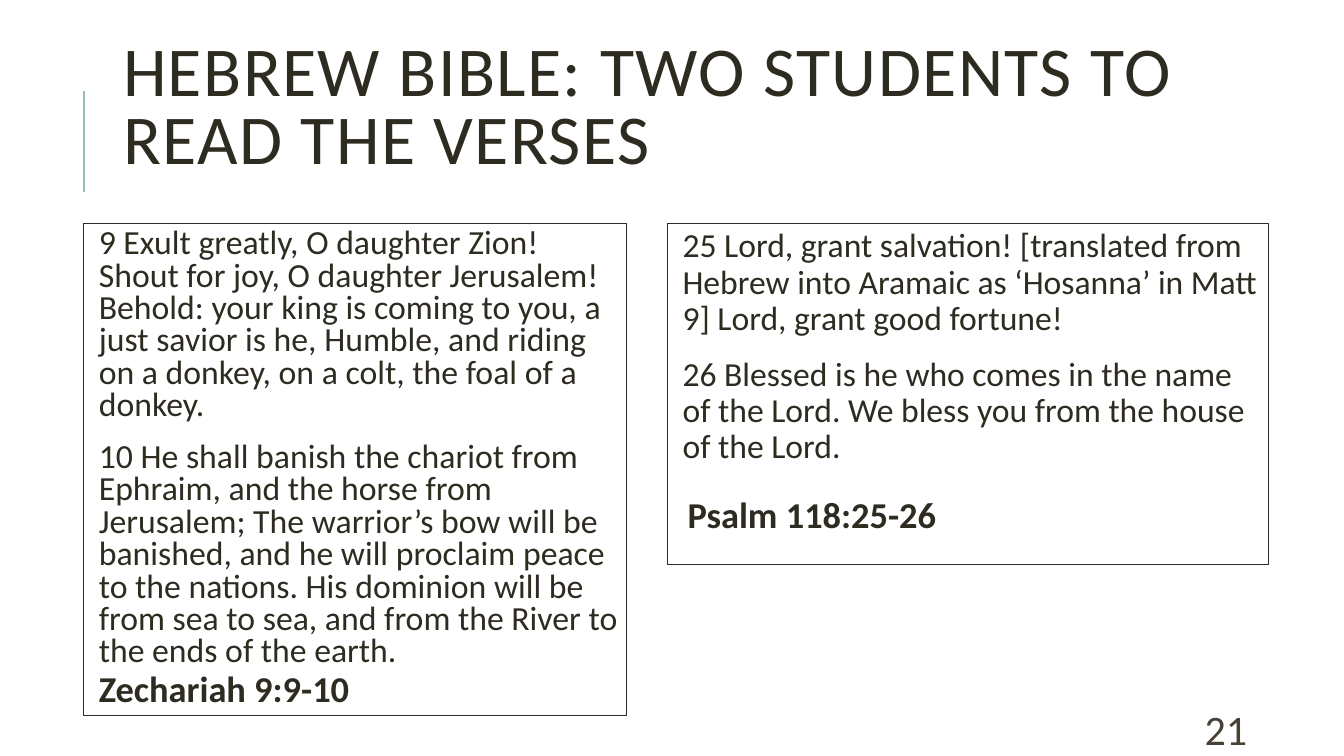
"""Build a slide with two framed Hebrew Bible readings and their references."""
from pptx import Presentation
from pptx.dml.color import RGBColor
from pptx.enum.shapes import MSO_CONNECTOR
from pptx.enum.text import MSO_ANCHOR, MSO_AUTO_SIZE, PP_ALIGN
from pptx.oxml.ns import qn
from pptx.util import Inches, Pt
from lxml import etree

INK = RGBColor(0x2E, 0x2B, 0x21)
NUMBER_INK = RGBColor(0x47, 0x42, 0x33)
ACCENT = RGBColor(0x9C, 0xBE, 0xBD)

ZECHARIAH = [
    "9 Exult greatly, O daughter Zion! Shout for joy, O daughter Jerusalem! "
    "Behold: your king is coming to you, a just savior is he, Humble, and riding "
    "on a donkey, on a colt, the foal of a donkey.",
    "10 He shall banish the chariot from Ephraim, and the horse from Jerusalem; "
    "The warrior’s bow will be banished, and he will proclaim peace to the nations. "
    "His dominion will be from sea to sea, and from the River to the ends of the earth.",
]
PSALM = [
    "25 Lord, grant salvation! [translated from Hebrew into Aramaic as ‘Hosanna’ "
    "in Matt 9] Lord, grant good fortune!",
    "26 Blessed is he who comes in the name of the Lord. "
    "We bless you from the house of the Lord.",
]


def style_text(text_frame, size, color, spacing, bold=False):
    text_frame.word_wrap = True
    text_frame.auto_size = MSO_AUTO_SIZE.NONE
    for paragraph in text_frame.paragraphs:
        paragraph.alignment = PP_ALIGN.LEFT
        paragraph.line_spacing = spacing
        for run in paragraph.runs:
            run.font.name = "Calibri"
            run.font.size = Pt(size)
            run.font.bold = bold
            run.font.color.rgb = color


presentation = Presentation()
presentation.slide_width = Inches(13.33)
presentation.slide_height = Inches(7.5)
slide = presentation.slides.add_slide(presentation.slide_layouts[5])

rule = slide.shapes.add_connector(
    MSO_CONNECTOR.STRAIGHT, Inches(0.83), Inches(1.9), Inches(0.83), Inches(0.9))
rule.line.color.rgb = ACCENT
rule.line.width = Pt(1.5)
etree.SubElement(rule._element.spPr, qn("a:effectLst"))

title = slide.shapes.title
title.left, title.top = Inches(1.12), Inches(0.64)
title.width, title.height = Inches(11.94), Inches(1.64)
title.text_frame.text = "HEBREW BIBLE: TWO STUDENTS TO READ THE VERSES \v"
title.text_frame.vertical_anchor = MSO_ANCHOR.MIDDLE
style_text(title.text_frame, 50, INK, 0.8)
for run in title.text_frame.paragraphs[0].runs:
    run.font._element.set("spc", "100")

passages = [
    (0.83, 2.22, 5.38, 4.88, ZECHARIAH, 24.1, 0.8, True),
    (6.62, 2.22, 5.96, 3.38, PSALM, 24, 0.9, True),
    (0.83, 6.61, 5.96, 0.66, ["Zechariah 9:9-10"], 26, 0.9, False),
    (6.67, 4.88, 5.96, 0.92, ["Psalm 118:25-26"], 26, 0.9, False),
]
for left, top, width, height, verses, size, spacing, framed in passages:
    box = slide.shapes.add_textbox(
        Inches(left), Inches(top), Inches(width), Inches(height))
    if framed:
        box.line.color.rgb = INK
        box.line.width = Pt(0.75)
    text_frame = box.text_frame
    text_frame.text = "\n".join(verses)
    text_frame.margin_left = Inches(0.15)
    text_frame.margin_top = text_frame.margin_right = text_frame.margin_bottom = Inches(0.05)
    style_text(text_frame, size, INK, spacing, bold=not framed)
    for paragraph in text_frame.paragraphs:
        paragraph.space_before = Pt(12)
        paragraph.space_after = Pt(2)

number = slide.shapes.add_textbox(
    Inches(11.85), Inches(7.08), Inches(1.06), Inches(0.3))
number.text_frame.text = "21"
number.text_frame.vertical_anchor = MSO_ANCHOR.MIDDLE
style_text(number.text_frame, 30, NUMBER_INK, 1.0)

presentation.save("out.pptx")
